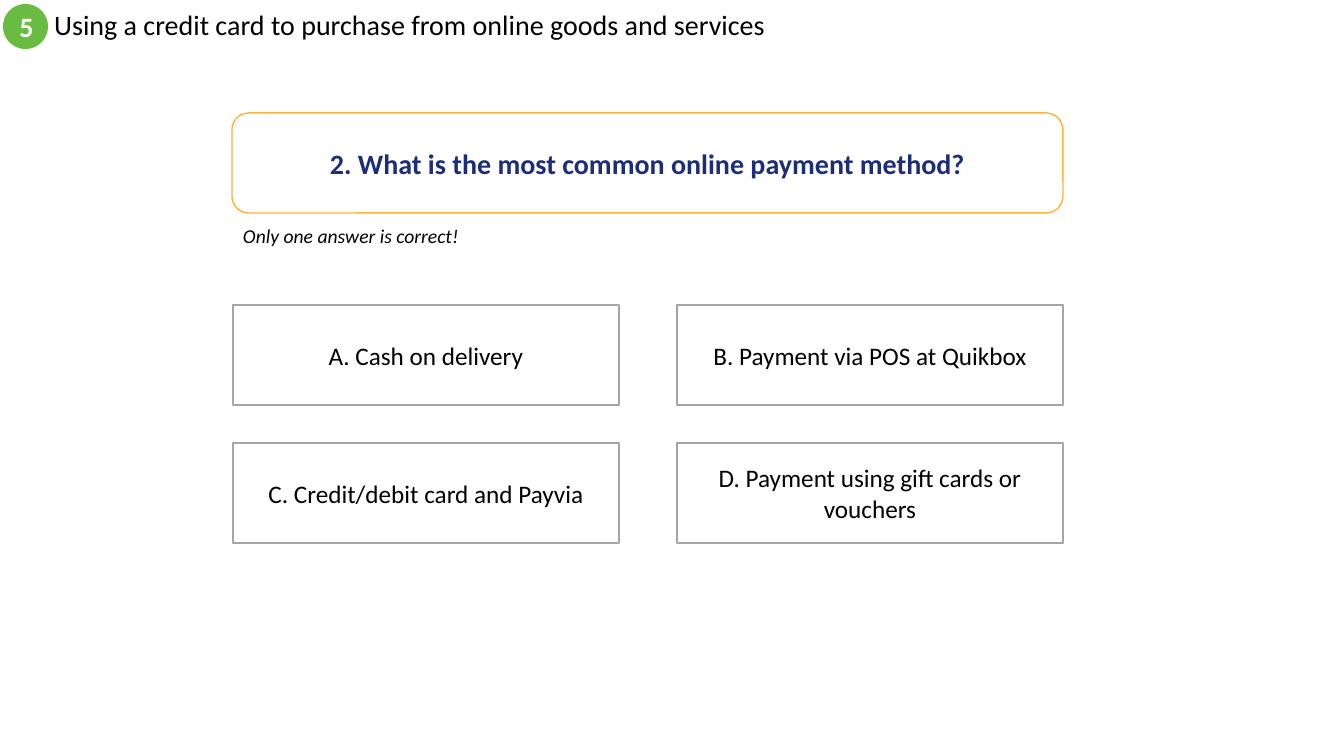
"""Build a quiz slide with one question and four possible answers."""
import pptx
import pptx.util
import pptx.dml.color
import pptx.enum.shapes
import pptx.enum.text

RGB = pptx.dml.color.RGBColor
SHAPE = pptx.enum.shapes.MSO_SHAPE
ALIGN = pptx.enum.text.PP_ALIGN
ANCHOR = pptx.enum.text.MSO_ANCHOR

BLACK = RGB(0x00, 0x00, 0x00)
WHITE = RGB(0xFF, 0xFF, 0xFF)
GREEN = RGB(0x68, 0xBC, 0x42)
ORANGE = RGB(0xFC, 0xB1, 0x3A)
NAVY = RGB(0x1C, 0x2E, 0x78)
GREY = RGB(0xA5, 0xA5, 0xA5)

TITLE = "Using a credit card to purchase from online goods and services"
NUMBER = "5"
QUESTION = "2. What is the most common online payment method?"
HINT = "Only one answer is correct!"
ANSWERS = [
    "A. Cash on delivery",
    "B. Payment via POS at Quikbox",
    "C. Credit/debit card and Payvia",
    "D. Payment using gift cards or vouchers",
]

SLIDE_SIZE = (1344, 756)
TITLE_BOX = (44, 4, 806, 45)
NUMBER_BOX = (3, 4, 45, 45)
QUESTION_BOX = (232, 113, 831, 100)
HINT_BOX = (233, 219, 238, 34)
ANSWER_LEFT, ANSWER_TOP, ANSWER_W, ANSWER_H = 233, 305, 386, 100
COLUMN_STEP, ROW_STEP, COLUMNS = 444, 138, 2

TITLE_FONT = {"size": 20, "color": BLACK, "bold": False}
NUMBER_FONT = {"size": 20, "color": WHITE, "bold": True}
QUESTION_FONT = {"size": 20, "color": NAVY, "bold": True}
HINT_FONT = {"size": 14, "color": BLACK, "italic": True}
ANSWER_FONT = {"size": 18, "color": BLACK}


def px(n):
    """Turn px into EMU."""
    return pptx.util.Emu(round(n * 914400 / 100.8))


def write(s, text, font, align=ALIGN.CENTER, anchor=ANCHOR.MIDDLE):
    """Put one formatted paragraph into a shape."""
    tf = s.text_frame
    tf.word_wrap = True
    tf.auto_size = pptx.enum.text.MSO_AUTO_SIZE.NONE
    tf.vertical_anchor = anchor
    p = tf.paragraphs[0]
    p.alignment = align
    r = p.add_run()
    r.text = text
    r.font.name = "Calibri"
    for name, value in font.items():
        if name == "color":
            r.font.color.rgb = value
        else:
            setattr(r.font, name, pptx.util.Pt(value) if name == "size" else value)
    return p


def add_box(slide, kind, box, fill, line, width, text, font):
    """Add a filled shape with centred text."""
    s = slide.shapes.add_shape(kind, *map(px, box))
    s.shadow.inherit = False
    s.fill.solid()
    s.fill.fore_color.rgb = fill
    if line is None:
        s.line.fill.background()
    else:
        s.line.color.rgb = line
        s.line.width = pptx.util.Pt(width)
    write(s, text, font)


def main():
    """Build and save the slide."""
    prs = pptx.Presentation()
    prs.slide_width, prs.slide_height = map(px, SLIDE_SIZE)
    slide = prs.slides.add_slide(prs.slide_layouts[5])

    title = slide.shapes.title
    for name, value in zip(("left", "top", "width", "height"), TITLE_BOX):
        setattr(title, name, px(value))
    write(title, TITLE, TITLE_FONT, ALIGN.LEFT).line_spacing = 0.9

    add_box(slide, SHAPE.OVAL, NUMBER_BOX, GREEN, None, 0, NUMBER, NUMBER_FONT)
    add_box(slide, SHAPE.ROUNDED_RECTANGLE, QUESTION_BOX, WHITE, ORANGE, 1,
            QUESTION, QUESTION_FONT)
    hint = slide.shapes.add_textbox(*map(px, HINT_BOX))
    write(hint, HINT, HINT_FONT, ALIGN.LEFT, ANCHOR.TOP)

    for i, answer in enumerate(ANSWERS):
        row, column = divmod(i, COLUMNS)
        box = (ANSWER_LEFT + column * COLUMN_STEP, ANSWER_TOP + row * ROW_STEP,
               ANSWER_W, ANSWER_H)
        add_box(slide, SHAPE.RECTANGLE, box, WHITE, GREY, 2, answer, ANSWER_FONT)

    prs.save("out.pptx")


if __name__ == "__main__":
    main()
